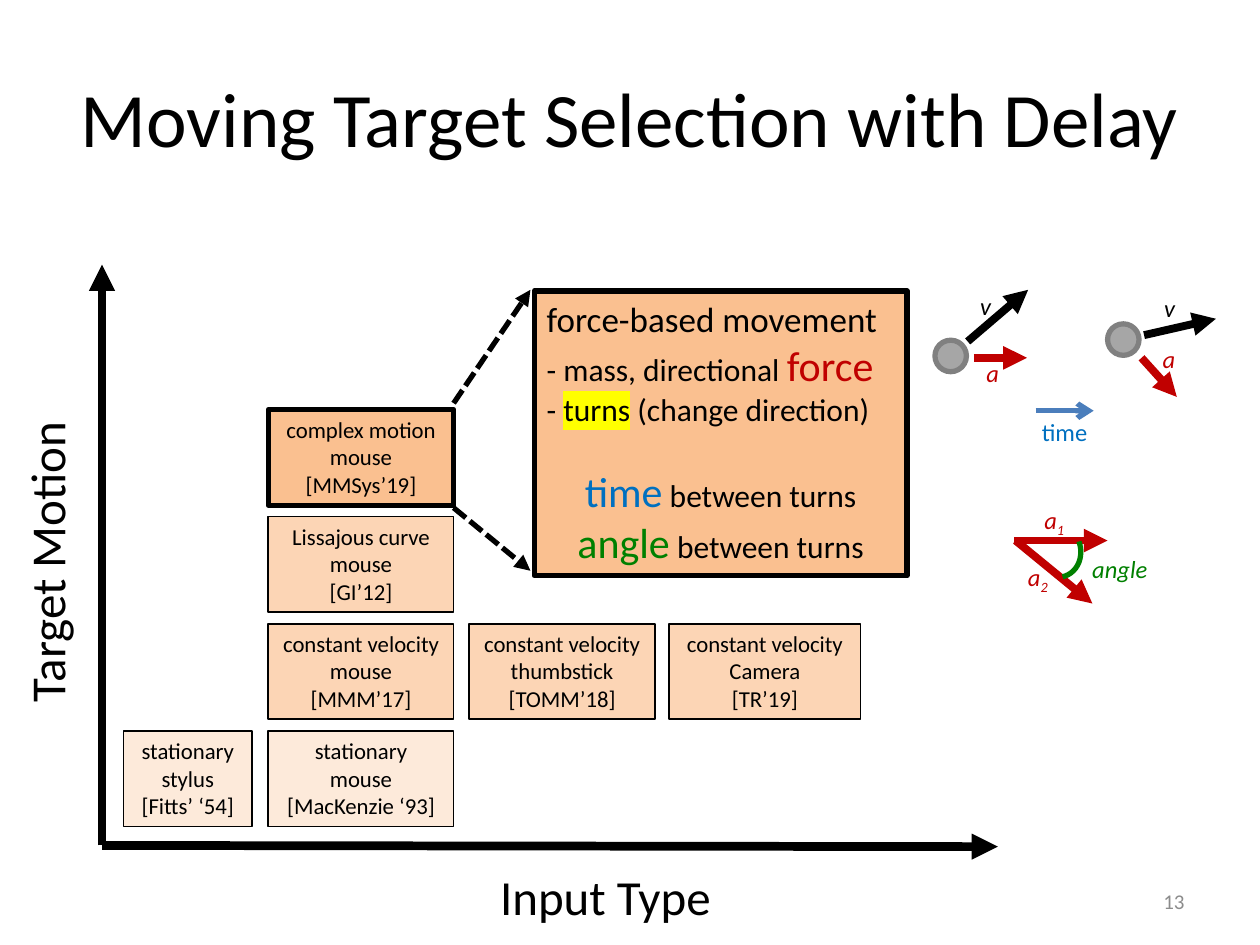
from lxml import etree
from pptx import Presentation, util as u
from pptx.dml.color import RGBColor
from pptx.enum import dml, shapes, text
from pptx.oxml.ns import qn

BLACK = RGBColor(0x00, 0x00, 0x00)
RED = RGBColor(0xC0, 0x00, 0x00)
GREEN = RGBColor(0x00, 0x80, 0x00)
BLUE = RGBColor(0x00, 0x70, 0xC0)
ARROW_BLUE = RGBColor(0x4B, 0x7E, 0xBC)
GRAY = RGBColor(0x8C, 0x8C, 0x8C)
BALL_FILL = RGBColor(0xA6, 0xA6, 0xA6)
BALL_LINE = RGBColor(0x80, 0x80, 0x80)
PALE = RGBColor(0xFD, 0xEA, 0xDA)
PEACH = RGBColor(0xFC, 0xD5, 0xB5)
ORANGE = RGBColor(0xFA, 0xC0, 0x90)
LEFT, CENTER, RIGHT = text.PP_ALIGN.LEFT, text.PP_ALIGN.CENTER, text.PP_ALIGN.RIGHT

presentation = Presentation()
presentation.slide_width, presentation.slide_height = u.Inches(10), u.Inches(7.5)
slide = presentation.slides.add_slide(presentation.slide_layouts[5])


def write(shape, paragraphs, align=LEFT, wrap=False):
    """Fill a shape; each paragraph is a list of (words, size, color, font options)."""
    frame = shape.text_frame
    frame.word_wrap = wrap
    for index, runs in enumerate(paragraphs):
        paragraph = frame.paragraphs[0] if index == 0 else frame.add_paragraph()
        paragraph.alignment = align
        for words, size, color, *options in runs:
            run = paragraph.add_run()
            run.text = words
            run.font.size = u.Pt(size)
            run.font.color.rgb = color
            if "highlight" in options:
                highlight = etree.SubElement(run.font._element, qn("a:highlight"))
                etree.SubElement(highlight, qn("a:srgbClr"), val="FFFF00")
            run.font.name = "Calibri"
            if "italic" in options:
                run.font.italic = True
            if "subscript" in options:
                run.font._element.set("baseline", "-25000")
    return frame


def add_arrow(start, end, color, width, head="triangle", dash=None):
    points = [u.Inches(value) for value in (*start, *end)]
    arrow = slide.shapes.add_connector(shapes.MSO_CONNECTOR.STRAIGHT, *points)
    arrow.line.color.rgb = color
    arrow.line.width = u.Pt(width)
    if dash:
        arrow.line.dash_style = dash
    properties = arrow._element.spPr
    etree.SubElement(properties.find(qn("a:ln")), qn("a:tailEnd"), type=head)
    etree.SubElement(properties, qn("a:effectLst"))


# Title and slide number
title = slide.shapes.title
title.left, title.top, title.width, title.height = map(u.Inches, (0.5, 0.3, 9, 1.25))
frame = write(title, [[("Moving Target Selection with Delay", 44, BLACK)]], CENTER, True)
frame.vertical_anchor = text.MSO_ANCHOR.MIDDLE
number = slide.shapes.add_textbox(*map(u.Inches, (7.17, 6.95, 2.33, 0.4)))
frame = write(number, [[("13", 12, GRAY)]], RIGHT, True)
frame.vertical_anchor = text.MSO_ANCHOR.MIDDLE

# Axes
ORIGIN = (0.81, 6.71)
add_arrow(ORIGIN, (7.92, 6.72), BLACK, 5)
add_arrow(ORIGIN, (0.81, 2.1), BLACK, 5)
for label, left, top, width, rotation in [
    ("Input Type", 3.87, 6.83, 1.89, 0),
    ("Target Motion", -0.86, 4.16, 2.45, 270),
]:
    box = slide.shapes.add_textbox(*map(u.Inches, (left, top, width, 0.57)))
    box.rotation = rotation
    write(box, [[(label, 28, BLACK)]])

# Studies: input type gives the column, target motion the row from the bottom
COLUMNS = [(0.98, 1.02), (2.13, 1.47), (3.72, 1.48), (5.31, 1.52)]
ROW_FILLS = [PALE, PEACH, PEACH, ORANGE]
BOTTOM_ROW, ROW_STEP, BOX_HEIGHT = 5.8, 0.85, 0.76
STUDIES = [
    (0, 0, ["stationary", "stylus", "[Fitts’ ‘54]"]),
    (1, 0, ["stationary", "mouse", "[MacKenzie ‘93]"]),
    (1, 1, ["constant velocity mouse", "[MMM’17]"]),
    (2, 1, ["constant velocity", "thumbstick", "[TOMM’18]"]),
    (3, 1, ["constant velocity", "Camera", "[TR’19]"]),
    (1, 2, ["Lissajous curve", "mouse", "[GI’12]"]),
    (1, 3, ["complex motion", "mouse", "[MMSys’19]"]),
]
boxes = []
for column, row, lines in STUDIES:
    left, width = COLUMNS[column]
    top = BOTTOM_ROW - row * ROW_STEP
    box = slide.shapes.add_shape(
        shapes.MSO_SHAPE.RECTANGLE, *map(u.Inches, (left, top, width, BOX_HEIGHT)))
    write(box, [[(line, 13, BLACK)] for line in lines], CENTER, True)
    boxes.append((box, ROW_FILLS[row], 3 if row == 3 else 1))

# Detail of the complex motion study
detail = slide.shapes.add_shape(
    shapes.MSO_SHAPE.RECTANGLE, *map(u.Inches, (4.24, 2.31, 2.96, 2.26)))
frame = write(detail, [
    [("force-based movement", 20, BLACK)],
    [("- mass, directional ", 18, BLACK), ("force", 24, RED)],
    [("- ", 18, BLACK), ("turns", 18, BLACK, "highlight"),
     (" (change direction)", 18, BLACK)],
    [("time", 24, BLUE), (" between turns", 18, BLACK)],
    [("angle", 24, GREEN), (" between turns", 18, BLACK)],
])
for paragraph in frame.paragraphs[3:]:
    paragraph.alignment = CENTER
frame.paragraphs[3].space_before = u.Pt(22)
boxes.append((detail, ORANGE, 3))

for box, fill, width in boxes:
    box.shadow.inherit = False
    box.fill.solid()
    box.fill.fore_color.rgb = fill
    box.line.color.rgb = BLACK
    box.line.width = u.Pt(width)
    box.text_frame.vertical_anchor = text.MSO_ANCHOR.TOP

for start, end in [((3.6, 3.2), (4.21, 2.3)), ((3.6, 4.03), (4.21, 4.53))]:
    add_arrow(start, end, BLACK, 3, dash=dml.MSO_LINE.SQUARE_DOT)

# Balls before and after a turn, and the arc of the turning angle
for left, top in [(7.42, 2.7), (8.79, 2.57)]:
    ball = slide.shapes.add_shape(
        shapes.MSO_SHAPE.OVAL, *map(u.Inches, (left, top, 0.25, 0.25)))
    ball.shadow.inherit = False
    ball.fill.solid()
    ball.fill.fore_color.rgb = BALL_FILL
    ball.line.color.rgb = BALL_LINE
    ball.line.width = u.Pt(3)

# Velocity, acceleration and time arrows
for start, end, color in [
    ((7.68, 2.71), (8.16, 2.3), BLACK),
    ((7.73, 2.84), (8.15, 2.84), RED),
    ((9.08, 2.66), (9.65, 2.53), BLACK),
    ((9.06, 2.84), (9.34, 3.15), RED),
    ((8.05, 4.29), (8.79, 4.29), RED),
    ((8.06, 4.29), (8.67, 4.79), RED),
]:
    add_arrow(start, end, color, 4.5)
add_arrow((8.22, 3.26), (8.68, 3.26), ARROW_BLUE, 3, "arrow")

arc = slide.shapes.add_shape(
    shapes.MSO_SHAPE.ARC, *map(u.Inches, (8.16, 4.17, 0.44, 0.39)))
arc.adjustments[0], arc.adjustments[1] = 162, 3.61
arc.rotation = 69.9
arc.shadow.inherit = False
arc.fill.background()
arc.line.color.rgb = GREEN
arc.line.width = u.Pt(3)

# Arrow labels
for left, top, width, runs in [
    (7.68, 2.26, 0.29, [("v", 14, BLACK, "italic")]),
    (7.73, 2.79, 0.3, [("a", 14, RED, "italic")]),
    (9.14, 2.28, 0.29, [("v", 14, BLACK, "italic")]),
    (9.13, 2.68, 0.3, [("a", 14, RED, "italic")]),
    (8.17, 3.26, 0.57, [("time", 14, BLUE)]),
    (8.57, 4.35, 0.65, [("angle", 14, GREEN, "italic")]),
    (8.19, 3.96, 0.37, [("a", 14, RED, "italic"), ("1", 14, RED, "italic", "subscript")]),
    (8.06, 4.41, 0.37, [("a", 14, RED, "italic"), ("2", 14, RED, "italic", "subscript")]),
]:
    label = slide.shapes.add_textbox(*map(u.Inches, (left, top, width, 0.34)))
    write(label, [runs])

presentation.save("out.pptx")
